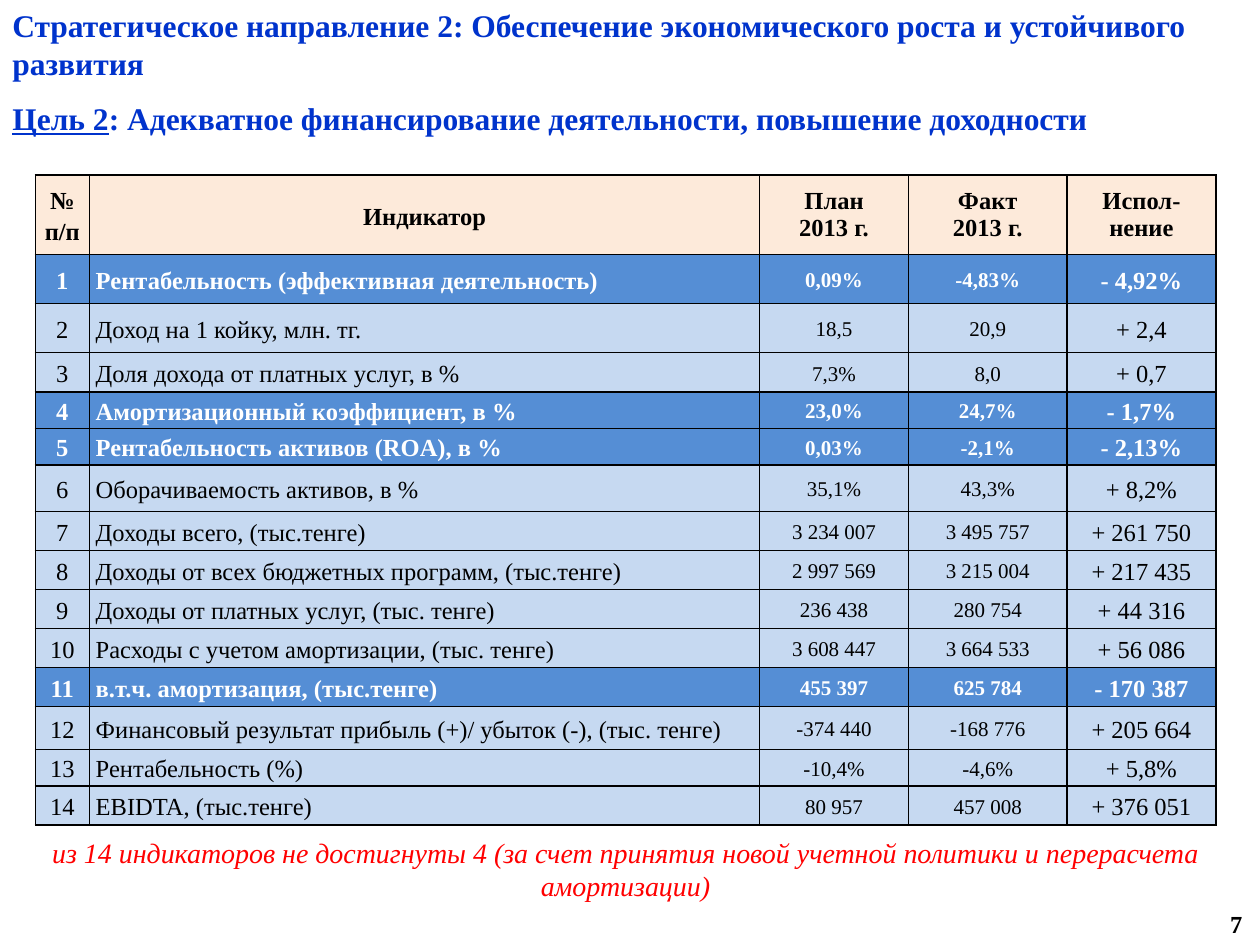
"""Build the slide of financial indicators for strategic direction 2."""
from lxml import etree
from pptx import Presentation
from pptx.dml.color import RGBColor
from pptx.enum.text import MSO_ANCHOR, PP_ALIGN
from pptx.oxml.ns import qn
from pptx.util import Inches, Pt

LEFT, MID, RIGHT = PP_ALIGN.LEFT, PP_ALIGN.CENTER, PP_ALIGN.RIGHT
CENTER = MSO_ANCHOR.MIDDLE
FONT = "Times New Roman"
BLUE, RED, BLACK, WHITE = "0033CC", "FF0000", "000000", "FFFFFF"
PEACH, PALE, DARK = "FDEADA", "C6D9F1", "558ED5"

TITLE = "Стратегическое направление 2: Обеспечение экономического роста и устойчивого развития"
GOAL = ("Цель 2", ": Адекватное финансирование деятельности, повышение доходности")
NOTE = ("из 14 индикаторов не достигнуты 4 (за счет принятия новой "
        "учетной политики и перерасчета амортизации)")
PAGE = "7"

HEAD = ("№ п/п", "Индикатор", "План\n2013 г.", "Факт\n2013 г.", "Испол-нение")
ROWS = [
    ("Рентабельность (эффективная деятельность)", "0,09%", "-4,83%", "- 4,92%"),
    ("Доход на 1 койку, млн. тг.", "18,5", "20,9", "+ 2,4"),
    ("Доля дохода от платных услуг, в %", "7,3%", "8,0", "+ 0,7"),
    ("Амортизационный коэффициент, в %", "23,0%", "24,7%", "- 1,7%"),
    ("Рентабельность активов (ROA), в %", "0,03%", "-2,1%", "- 2,13%"),
    ("Оборачиваемость активов, в %", "35,1%", "43,3%", "+ 8,2%"),
    ("Доходы всего, (тыс.тенге)", "3 234 007", "3 495 757", "+ 261 750"),
    ("Доходы от всех бюджетных программ, (тыс.тенге)", "2 997 569", "3 215 004", "+ 217 435"),
    ("Доходы от платных услуг, (тыс. тенге)", "236 438", "280 754", "+ 44 316"),
    ("Расходы с учетом амортизации, (тыс. тенге)", "3 608 447", "3 664 533", "+ 56 086"),
    ("в.т.ч. амортизация, (тыс.тенге)", "455 397", "625 784", "- 170 387"),
    ("Финансовый результат прибыль (+)/ убыток (-), (тыс. тенге)",
     "-374 440", "-168 776", "+ 205 664"),
    ("Рентабельность (%)", "-10,4%", "-4,6%", "+ 5,8%"),
    ("EBIDTA, (тыс.тенге)", "80 957", "457 008", "+ 376 051"),
]
MISSED = {1, 4, 5, 11}
WIDTHS = (0.43, 5.32, 1.18, 1.26, 1.18)
HEIGHTS = (0.63, 0.39, 0.39, 0.31, 0.29, 0.29, 0.37,
           0.31, 0.31, 0.31, 0.31, 0.31, 0.34, 0.29, 0.31)


def color(code):
    return RGBColor.from_string(code)


def style(para, size, code, bold=False, italic=False, align=LEFT):
    font = para.font
    font.name, font.size = FONT, Pt(size)
    font.bold, font.italic = bold, italic
    font.color.rgb = color(code)
    para.alignment = align


def add_text(slide, box, text):
    frame = slide.shapes.add_textbox(*map(Inches, box)).text_frame
    frame.word_wrap = True
    frame.text = text
    return frame


def add_border(cell):
    props = cell._tc.get_or_add_tcPr()
    for side in ("a:lnL", "a:lnR", "a:lnT", "a:lnB"):
        line = etree.SubElement(props, qn(side), w=str(Pt(1)))
        fill = etree.SubElement(line, qn("a:solidFill"))
        etree.SubElement(fill, qn("a:srgbClr"), val=BLACK)


def fill_cell(cell, text, row, col):
    head, missed = row == 0, row in MISSED
    add_border(cell)
    cell.fill.solid()
    cell.fill.fore_color.rgb = color(PEACH if head else DARK if missed else PALE)
    cell.vertical_anchor = CENTER
    cell.margin_left = cell.margin_right = Inches(0.05)
    cell.margin_top = cell.margin_bottom = 0
    cell.text = text
    size = 12 if not head and col in (2, 3) else 14
    align = LEFT if not head and col == 1 else MID
    for para in cell.text_frame.paragraphs:
        style(para, size, WHITE if missed else BLACK, head or missed, align=align)
        para.line_spacing = 1.0 if head and col > 1 else 1.15


def add_grid(slide):
    data = [HEAD] + [(str(num), *row) for num, row in enumerate(ROWS, 1)]
    box = (0.28, 1.39, sum(WIDTHS), sum(HEIGHTS))
    grid = slide.shapes.add_table(len(data), len(HEAD), *map(Inches, box)).table
    for col, width in zip(grid.columns, WIDTHS):
        col.width = Inches(width)
    for row, height in zip(grid.rows, HEIGHTS):
        row.height = Inches(height)
    for r, row in enumerate(data):
        for c, text in enumerate(row):
            fill_cell(grid.cell(r, c), text, r, c)


def main():
    deck = Presentation()
    deck.slide_width, deck.slide_height = Inches(10), Inches(7.5)
    slide = deck.slides.add_slide(deck.slide_layouts[6])

    title = add_text(slide, (0, 0, 10, 1.14), TITLE)
    goal = title.add_paragraph()
    for text, under in zip(GOAL, (True, False)):
        run = goal.add_run()
        run.text, run.font.underline = text, under
    goal.space_before = Pt(10)
    for para in title.paragraphs:
        style(para, 18, BLUE, bold=True)

    add_grid(slide)

    note = add_text(slide, (0.28, 6.58, 9.37, 0.64), NOTE)
    style(note.paragraphs[0], 16, RED, italic=True, align=MID)

    page = add_text(slide, (7.63, 7.13, 2.33, 0.4), PAGE)
    page.vertical_anchor = CENTER
    style(page.paragraphs[0], 14, BLACK, bold=True, align=RIGHT)

    deck.save("out.pptx")


if __name__ == "__main__":
    main()
